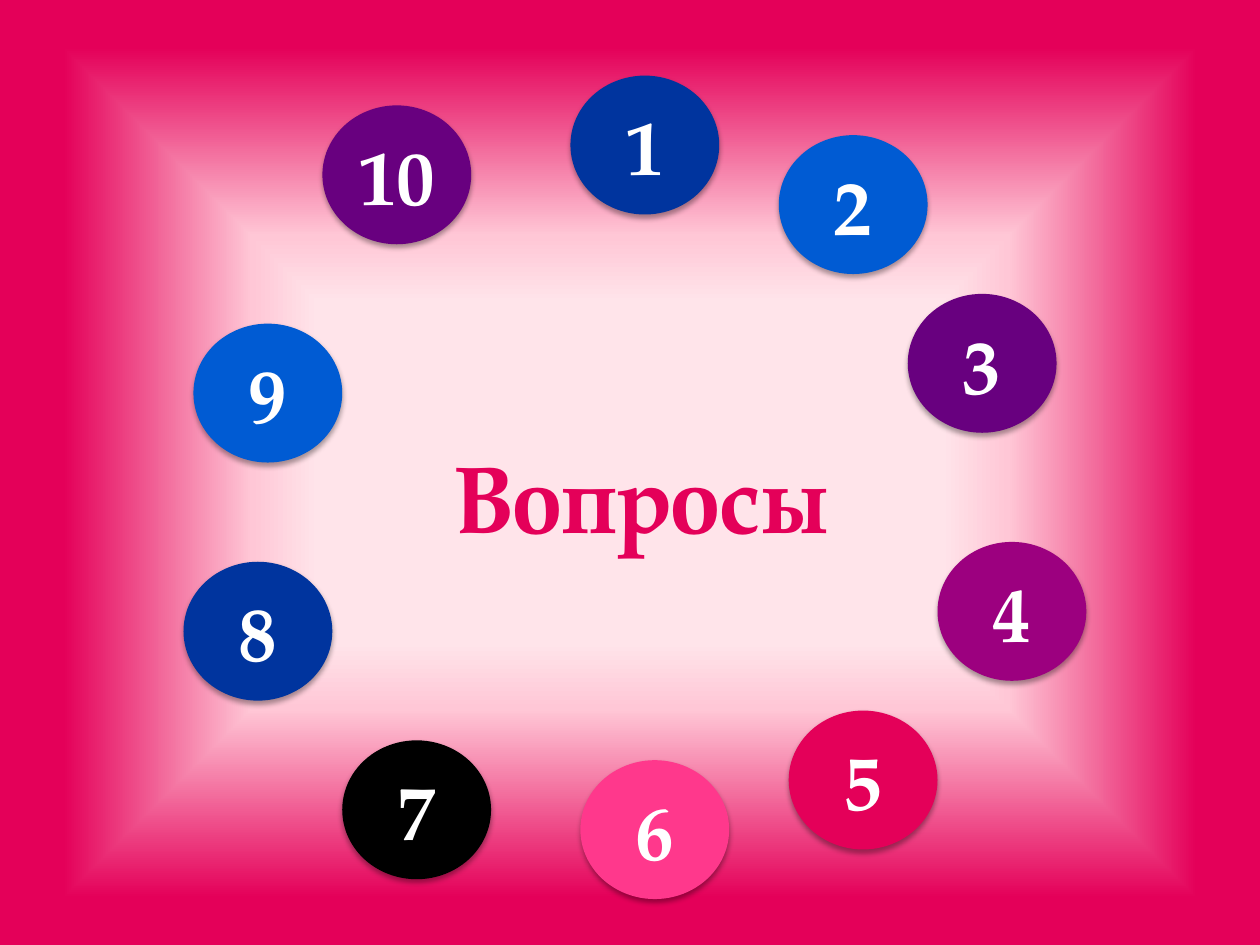
"""Build a question-picker slide with ten numbered discs around a title."""
import pptx
import pptx.dml.color
import pptx.enum.shapes
import pptx.enum.text
import pptx.oxml
import pptx.oxml.ns
import pptx.util

BLACK = pptx.dml.color.RGBColor(0x00, 0x00, 0x00)
WHITE = pptx.dml.color.RGBColor(0xFF, 0xFF, 0xFF)
NAVY = pptx.dml.color.RGBColor(0x00, 0x34, 0x9E)
BLUE = pptx.dml.color.RGBColor(0x00, 0x5B, 0xD3)
PURPLE = pptx.dml.color.RGBColor(0x68, 0x00, 0x7F)
MAGENTA = pptx.dml.color.RGBColor(0x9C, 0x00, 0x7F)
CRIMSON = pptx.dml.color.RGBColor(0xE4, 0x00, 0x59)
DARK_CRIMSON = pptx.dml.color.RGBColor(0xA1, 0x00, 0x3F)
PINK = pptx.dml.color.RGBColor(0xFF, 0x38, 0x8C)
ROSE = pptx.dml.color.RGBColor(0xFF, 0xC7, 0xD6)
PALE_ROSE = pptx.dml.color.RGBColor(0xFF, 0xE4, 0xEA)
FONT = "TeX Gyre Pagella"
NAMESPACES = pptx.oxml.ns.nsdecls("a", "p")

presentation = pptx.Presentation()
presentation.slide_width = pptx.util.Inches(10)
presentation.slide_height = pptx.util.Inches(7.5)
slide = presentation.slides.add_slide(presentation.slide_layouts[6])
unit = presentation.slide_width / 127
middle = presentation.slide_height / 2


def write_text(shape, text, size):
    """Write one bold centred line and return its run."""
    frame = shape.text_frame
    frame.text = text
    frame.word_wrap = False
    paragraph = frame.paragraphs[0]
    paragraph.alignment = pptx.enum.text.PP_ALIGN.CENTER
    run = paragraph.runs[0]
    run.font.name = FONT
    run.font.size = pptx.util.Pt(size)
    run.font.bold = True
    return run


stops = "".join(
    f'<a:gs pos="{share * 1000}"><a:srgbClr val="{color}"/></a:gs>'
    for share, color in [(36, PALE_ROSE), (50, ROSE), (90, CRIMSON)]
)
background = pptx.oxml.parse_xml(
    f"<p:bg {NAMESPACES}><p:bgPr><a:gradFill><a:gsLst>{stops}</a:gsLst>"
    '<a:path path="shape"><a:fillToRect l="50000" t="50000" r="50000" b="50000"/></a:path>'
    "</a:gradFill><a:effectLst/></p:bgPr></p:bg>"
)
slide.element.cSld.insert(0, background)

disc_width, disc_height = 15 * unit, 14 * unit
discs = [
    (65, -33, NAVY),
    (86, -27, BLUE),
    (99, -11, PURPLE),
    (102, 14, MAGENTA),
    (87, 31, CRIMSON),
    (66, 36, PINK),
    (42, 34, BLACK),
    (26, 16, NAVY),
    (27, -8, BLUE),
    (40, -30, PURPLE),
]
for number, (column, row, color) in enumerate(discs, start=1):
    disc = slide.shapes.add_shape(
        pptx.enum.shapes.MSO_SHAPE.OVAL,
        int(column * unit - disc_width / 2),
        int(middle + row * unit - disc_height / 2),
        int(disc_width),
        int(disc_height),
    )
    disc.fill.solid()
    disc.fill.fore_color.rgb = color
    disc.line.fill.background()
    disc.element.spPr.append(pptx.oxml.parse_xml(
        f'<a:effectLst {NAMESPACES}><a:outerShdw blurRad="38100" dist="25400" dir="5400000" '
        f'rotWithShape="0"><a:srgbClr val="{BLACK}"><a:alpha val="35000"/></a:srgbClr>'
        "</a:outerShdw></a:effectLst>"
    ))
    disc.text_frame.vertical_anchor = pptx.enum.text.MSO_ANCHOR.MIDDLE
    write_text(disc, str(number), 44).font.color.rgb = WHITE

title = slide.shapes.add_textbox(
    int(presentation.slide_width * 0.35),
    int(presentation.slide_height * 0.458),
    int(presentation.slide_width * 0.317),
    int(presentation.slide_height * 0.135),
)
title_run = write_text(title, "Вопросы", 54)
title.text_frame.auto_size = pptx.enum.text.MSO_AUTO_SIZE.SHAPE_TO_FIT_TEXT
title_run.font.fill.gradient()
title_run.font.fill.gradient_angle = 270
title_stops = [(0.25, CRIMSON), (1, DARK_CRIMSON)]
for stop, (position, color) in zip(title_run.font.fill.gradient_stops, title_stops):
    stop.position = position
    stop.color.rgb = color
title_run.font._element.set("spc", "50")

presentation.save("out.pptx")
